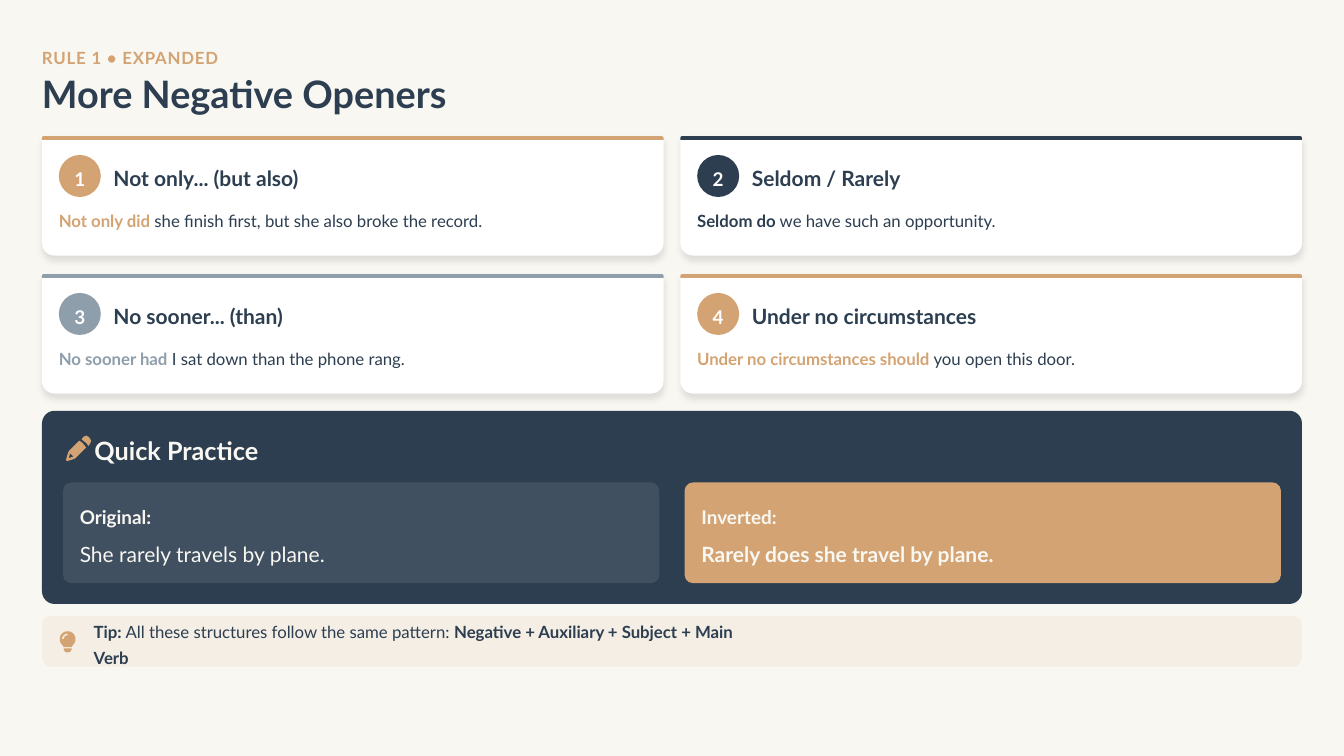
"""Build the 'More Negative Openers' grammar slide."""
import dataclasses
import math

import pptx
import pptx.dml.color
import pptx.enum.shapes
import pptx.enum.text
import pptx.oxml
import pptx.oxml.ns
import pptx.util

Pt = pptx.util.Pt
RGB = pptx.dml.color.RGBColor.from_string
SHAPE = pptx.enum.shapes.MSO_SHAPE
ALIGN = pptx.enum.text.PP_ALIGN
qn = pptx.oxml.ns.qn
A_NS = pptx.oxml.ns.nsdecls("a")


@dataclasses.dataclass(frozen=True)
class Theme:
    font: str = "Lato"
    cream: str = "F8F7F2"
    navy: str = "2C3E50"
    tan: str = "D4A373"
    slate: str = "8E9EAB"
    white: str = "FFFFFF"
    title: int = 36
    section: int = 24
    heading: int = 20
    label: int = 18
    body: int = 16


theme = Theme()


def write(holder, runs, size, spacing, align=ALIGN.LEFT):
    frame = holder.text_frame
    frame_format = {
        "word_wrap": True, "auto_size": pptx.enum.text.MSO_AUTO_SIZE.NONE,
        "vertical_anchor": pptx.enum.text.MSO_ANCHOR.MIDDLE,
        "margin_left": 0, "margin_top": 0, "margin_right": 0, "margin_bottom": 0,
    }
    for name, value in frame_format.items():
        setattr(frame, name, value)
    paragraph = frame.paragraphs[0]
    paragraph.alignment = align
    paragraph.line_spacing = spacing
    for text, color, bold in runs:
        run = paragraph.add_run()
        run.text = text
        for name, value in {"name": theme.font, "size": Pt(size), "bold": bold}.items():
            setattr(run.font, name, value)
        run.font.color.rgb = RGB(color)
    return paragraph


def paint(shape, color, radii=(), opacity=None):
    shape.shadow.inherit = False
    shape.fill.solid()
    shape.fill.fore_color.rgb = RGB(color)
    shape.line.fill.background()
    for index, radius in enumerate(radii):
        shape.adjustments[index] = Pt(radius) / min(shape.width, shape.height)
    if opacity:
        swatch = shape._element.spPr.find(qn("a:solidFill")).find(qn("a:srgbClr"))
        swatch.append(pptx.oxml.parse_xml(f'<a:alpha {A_NS} val="{opacity * 1000}"/>'))
    return shape


deck = pptx.Presentation()
deck.slide_width, deck.slide_height = Pt(1280), Pt(720)
slide = deck.slides.add_slide(deck.slide_layouts[5])
slide.background.fill.solid()
slide.background.fill.fore_color.rgb = RGB(theme.cream)
shapes = slide.shapes

margin, full_width = 40, 1200
eyebrow = shapes.add_textbox(Pt(margin), Pt(40), Pt(full_width), Pt(24))
eyebrow_line = write(eyebrow, [("RULE 1 • EXPANDED", theme.tan, True)], theme.body, 1.3)
eyebrow_line.runs[0]._r.get_or_add_rPr().set("spc", "80")

title = shapes.title
title_place = {"left": margin, "top": 72, "width": full_width, "height": 40}
for name, value in title_place.items():
    setattr(title, name, Pt(value))
write(title, [("More Negative Openers", theme.navy, True)], theme.title, 0.9)

openers = [
    ("Not only... (but also)", "Not only did",
     " she finish first, but she also broke the record.", theme.tan),
    ("Seldom / Rarely", "Seldom do", " we have such an opportunity.", theme.navy),
    ("No sooner... (than)", "No sooner had", " I sat down than the phone rang.", theme.slate),
    ("Under no circumstances", "Under no circumstances should",
     " you open this door.", theme.tan),
]
card_width, card_height, column_step, row_step = 592, 113.8, 608, 131.4
card_shadow = (
    f'<a:outerShdw {A_NS} blurRad="{Pt(6)}" dist="{Pt(4)}" dir="5400000" rotWithShape="0">'
    '<a:srgbClr val="000000"><a:alpha val="10000"/></a:srgbClr></a:outerShdw>'
)
for index, (heading, inversion, remainder, accent) in enumerate(openers):
    row, column = divmod(index, 2)
    left, top = margin + column * column_step, 129.6 + row * row_step
    card = shapes.add_shape(SHAPE.ROUND_2_SAME_RECTANGLE, Pt(left), Pt(top),
                            Pt(card_width), Pt(card_height))
    paint(card, theme.white, (4, 12))
    card._element.spPr.find(qn("a:effectLst")).append(pptx.oxml.parse_xml(card_shadow))
    stripe = shapes.add_shape(SHAPE.ROUND_2_SAME_RECTANGLE, Pt(left), Pt(top),
                              Pt(card_width), Pt(3.6))
    paint(stripe, accent, (1.8, 0))
    number = shapes.add_shape(SHAPE.OVAL, Pt(left + 16), Pt(top + 18), Pt(40), Pt(40))
    paint(number, accent)
    write(number, [(str(index + 1), theme.white, True)], theme.label, 1.3, ALIGN.CENTER)
    opener = shapes.add_textbox(Pt(left + 68), Pt(top + 23.8), Pt(508), Pt(28))
    write(opener, [(heading, theme.navy, True)], theme.heading, 1.2)
    example = shapes.add_textbox(Pt(left + 16), Pt(top + 66.2), Pt(568), Pt(24))
    write(example, [(inversion, accent, True), (remainder, theme.navy, False)],
          theme.body, 1.3)

practice = shapes.add_shape(SHAPE.ROUNDED_RECTANGLE, Pt(margin), Pt(391.2),
                            Pt(full_width), Pt(184))
paint(practice, theme.navy, (12,))
practice_heading = shapes.add_textbox(Pt(90), Pt(411.2), Pt(1142), Pt(32))
write(practice_heading, [("Quick Practice", theme.cream, True)], theme.section, 1.1)

sentences = [
    ("Original:", "She rarely travels by plane.", theme.cream, 10, False),
    ("Inverted:", "Rarely does she travel by plane.", theme.tan, None, True),
]
for index, (label, sentence, color, opacity, bold) in enumerate(sentences):
    left, top = 60 + index * 592, 459.4
    panel = shapes.add_shape(SHAPE.ROUNDED_RECTANGLE, Pt(left), Pt(top), Pt(568), Pt(96))
    paint(panel, color, (8,), opacity)
    caption = shapes.add_textbox(Pt(left + 16), Pt(top + 19.4), Pt(546), Pt(20))
    write(caption, [(label, theme.cream, True)], theme.label, 1.3)
    answer = shapes.add_textbox(Pt(left + 16), Pt(top + 51.8), Pt(546), Pt(28))
    write(answer, [(sentence, theme.cream, bold)], theme.heading, 1.2)

tip_band = shapes.add_shape(SHAPE.ROUNDED_RECTANGLE, Pt(margin), Pt(586.8),
                            Pt(full_width), Pt(48))
paint(tip_band, theme.tan, (8,), 10)
tip = shapes.add_textbox(Pt(89.3), Pt(599), Pt(637), Pt(24))
write(tip, [
    ("Tip:", theme.navy, True),
    (" All these structures follow the same pattern: ", theme.navy, False),
    ("Negative + Auxiliary + Subject + Main Verb", theme.navy, True),
], theme.body, 1.3)

pencil = [
    [(2, 17.3), (2.9, 15), (13, 5), (15.6, 6.8), (18, 9.6), (19.4, 11.5),
     (9.4, 21.6), (7.9, 22.5), (1.4, 24.4), (0.5, 23.9), (0.3, 23)],
    [(4.2, 17), (2.8, 21.6), (7.4, 20.2)],
    [(21.6, 10), (19.6, 7.2), (16.6, 5), (15.1, 3.6), (17, 1.3), (19.4, 0.2),
     (21.6, 1.2), (23, 2.6), (24.2, 5.2), (23.2, 7.9)],
]
arcs = [
    [(7.5 + radius * math.cos(math.radians(angle)), 7.5 + radius * math.sin(math.radians(angle)))
     for angle in range(start, stop, step)]
    for radius, start, stop, step in [
        (7.5, 45, -226, -10), (5.3, 180, 271, 10), (3.6, 270, 179, -10)]
]
bulb = [
    [(11.3, 15.1), *arcs[0], (3.8, 15.1)],
    [(11.3, 16.4), (3.8, 16.4), (3.9, 17.9), (5.3, 19.7), (7.5, 20.2), (9.8, 19.7), (11.2, 17.9)],
    arcs[1] + arcs[2],
]
for left, top, contours in [(62.6, 414.7, pencil), (56.9, 601.2, bulb)]:
    placed = [[(Pt(left + x), Pt(top + y)) for x, y in contour] for contour in contours]
    outline = shapes.build_freeform(*placed[0][0])
    outline.add_line_segments(placed[0][1:])
    for contour in placed[1:]:
        outline.move_to(*contour[0])
        outline.add_line_segments(contour[1:])
    paint(outline.convert_to_shape(), theme.tan)

deck.save("out.pptx")
